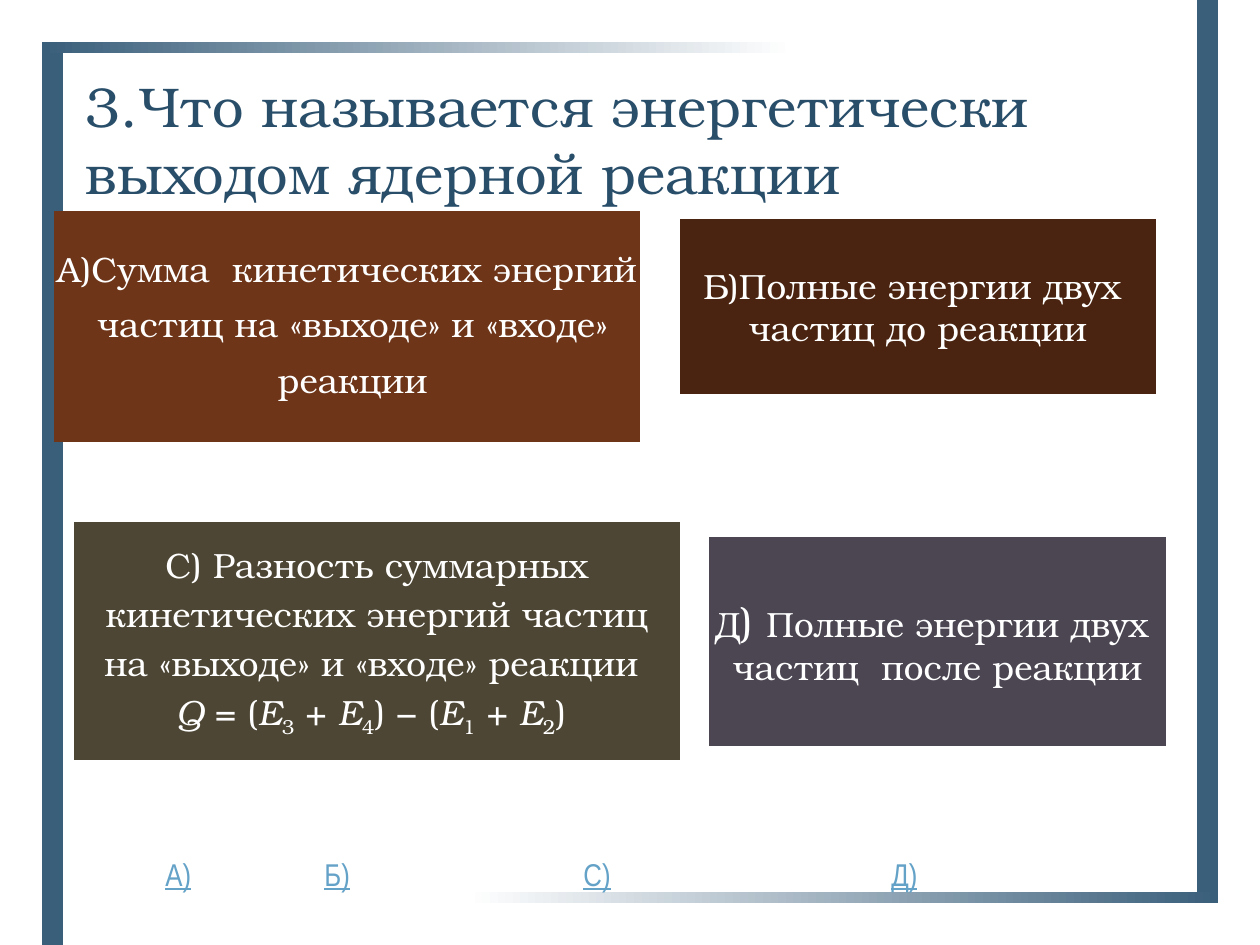
from pptx import Presentation
from pptx.dml.color import RGBColor
from pptx.enum.shapes import MSO_SHAPE
from pptx.enum.text import MSO_ANCHOR, MSO_AUTO_SIZE, PP_ALIGN
from pptx.util import Emu, Pt

SERIF = "TeX Gyre Bonum"
SANS = "Arial Narrow"
BLUE = "3A5F7B"
WHITE = "FFFFFF"


def px(length):
    """Turn a length in px into EMU."""
    return Emu(round(length * 914400 / 126))


def color(value):
    """Return the colour of a hex string."""
    return RGBColor.from_string(value)


def add_run(para, text, size, font, value, italic=False, lowered=False, underline=False):
    """Add one formatted run to a paragraph."""
    span = para.add_run()
    span.text = text
    span.font.size = Pt(size)
    span.font.name = font
    span.font.color.rgb = color(value)
    if italic:
        span.font.italic = True
    if underline:
        span.font.underline = True
    if lowered:
        span.font._element.set("baseline", "-25000")


def add_block(page, kind, box):
    """Add a shape without line or shadow."""
    shape = page.shapes.add_shape(kind, *map(px, box))
    shape.shadow.inherit = False
    shape.line.fill.background()
    return shape


def add_band(page, box, stops):
    """Add a horizontal bar that fades between two colour stops."""
    fill = add_block(page, MSO_SHAPE.RECTANGLE, box).fill
    fill.gradient()
    fill.gradient_angle = 0
    for stop, (position, value) in zip(fill.gradient_stops, stops):
        stop.position = position
        stop.color.rgb = color(value)


def add_frame(page, left, top, width, height):
    """Add the side bars and the fading bands around the page."""
    bar, band = 21, 11
    right = left + width - bar
    bottom = height - 53
    for box in ((right, 0, bar, bottom), (left, top + band, bar, height - top - band)):
        fill = add_block(page, MSO_SHAPE.RECTANGLE, box).fill
        fill.solid()
        fill.fore_color.rgb = color(BLUE)
    add_band(page, (left + bar, bottom, width - bar, band), ((0.35, WHITE), (1, BLUE)))
    add_band(page, (left, top, width - bar, band), ((0, BLUE), (0.65, WHITE)))


def add_title(page, text, box):
    """Place and format the title."""
    title = page.shapes.title
    title.left, title.top, title.width, title.height = map(px, box)
    frame = title.text_frame
    frame.word_wrap = True
    frame.auto_size = MSO_AUTO_SIZE.NONE
    frame.vertical_anchor = MSO_ANCHOR.BOTTOM
    para = frame.paragraphs[0]
    para.alignment = PP_ALIGN.LEFT
    add_run(para, text, 32, SERIF, "284E6A")


def add_answer(page, box, fill, lines, space=0, spacing=1.0):
    """Add an answer button, each line being a list of text, size and style."""
    shape = add_block(page, MSO_SHAPE.ACTION_BUTTON_CUSTOM, box)
    shape.fill.solid()
    shape.fill.fore_color.rgb = color(fill)
    frame = shape.text_frame
    frame.word_wrap = False
    frame.vertical_anchor = MSO_ANCHOR.MIDDLE
    for index, line in enumerate(lines):
        para = frame.add_paragraph() if index else frame.paragraphs[0]
        para.alignment = PP_ALIGN.CENTER
        para.line_spacing = spacing
        para.space_before = Pt(space if index else 0)
        for text, size, style in line:
            add_run(para, text, size, SERIF, WHITE, style == "italic", style == "lowered")


def plain(*texts):
    """Return lines of one plain run each."""
    return [[(text, 20, "")] for text in texts]


def formula():
    """Return the runs of the energy yield formula."""
    parts = [("Q", 20, "italic"), (" = (", 20, "")]
    for number, after in zip("3412", (" + ", ") − (", " + ", ") ")):
        parts += [("E", 20, "italic"), (number, 20, "lowered"), (after, 20, "")]
    return parts


def add_choices(page, top, choices):
    """Add the row of underlined choice letters."""
    for letter, left, width in choices:
        box = page.shapes.add_textbox(*map(px, (left, top, width, 50)))
        frame = box.text_frame
        frame.word_wrap = False
        frame.auto_size = MSO_AUTO_SIZE.SHAPE_TO_FIT_TEXT
        add_run(frame.paragraphs[0], letter, 18, SANS, "64A2C8", underline=True)


def main():
    """Build the quiz slide."""
    deck = Presentation()
    deck.slide_width, deck.slide_height = px(1260), px(945)
    page = deck.slides.add_slide(deck.slide_layouts[5])
    add_frame(page, 42, 42, 1176, 945)
    add_title(page, "3.Что называется энергетически выходом ядерной реакции", (73, 63, 1113, 149))
    add_answer(page, (74, 522, 606, 238), "4D4634", plain(
        "С) Разность суммарных",
        " кинетических энергий частиц ",
        "на «выходе» и «входе» реакции ",
    ) + [formula()], space=4)
    add_answer(page, (54, 211, 586, 231), "6E3519", plain(
        "А)Сумма  кинетических энергий",
        " частиц на «выходе» и «входе»",
        " реакции",
    ), space=10, spacing=0.9)
    add_answer(page, (680, 219, 476, 175), "4A2410", plain(
        "Б)Полные энергии двух ", "частиц до реакции"))
    add_answer(page, (709, 537, 457, 209), "4C4652", [
        [("Д", 20, ""), (") ", 24, ""), ("Полные энергии двух ", 20, "")],
        *plain("частиц  после реакции"),
    ])
    add_choices(page, 849, (("А)", 153, 57), ("Б)", 312, 57), ("С)", 571, 59), ("Д)", 879, 58)))
    deck.save("out.pptx")


if __name__ == "__main__":
    main()
